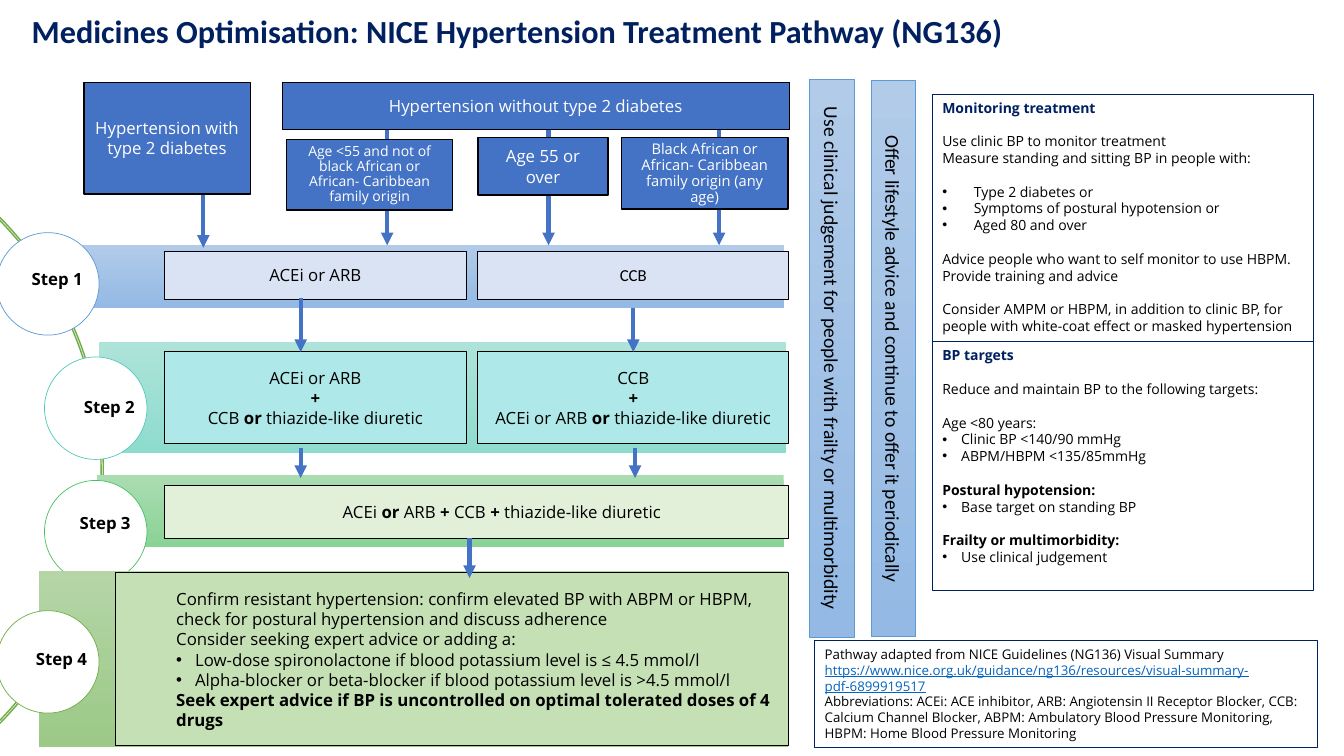
from lxml import etree
from pptx import Presentation
from pptx.dml.color import RGBColor
from pptx.enum.shapes import MSO_CONNECTOR, MSO_SHAPE
from pptx.enum.text import MSO_ANCHOR, PP_ALIGN
from pptx.oxml.ns import qn
from pptx.util import Inches, Pt

RECTANGLE, OVAL, ARC = MSO_SHAPE.RECTANGLE, MSO_SHAPE.OVAL, MSO_SHAPE.BLOCK_ARC
STRAIGHT = MSO_CONNECTOR.STRAIGHT
TOP, MIDDLE = MSO_ANCHOR.TOP, MSO_ANCHOR.MIDDLE
LEFT, CENTER = PP_ALIGN.LEFT, PP_ALIGN.CENTER

THEME = {
    "font": "Open Sans", "title font": "Calibri",
    "black": "000000", "white": "FFFFFF", "navy": "002060", "link": "0563C1",
    "header": "4472C4", "ring": "70AD47", "bar line": "5B9BD5",
    "blue fade": ("B1CBE9", "93B9E4"), "teal fade": ("ADE3D9", "8EDCCE"),
    "mint fade": ("AADCB2", "8AD396"), "green fade": ("B5D5A7", "9CC987"),
    "step 1": "DAE3F3", "step 2": "AEE8E8", "step 3": "E2F0D9", "step 4": "C5E0B4",
    "title": 23, "bar": 14, "body": 12, "group": 10.5, "small": 10, "note": 9.5,
    "gap": 12,
}

# Slide on a grid of 160 columns by 90 rows
deck = Presentation()
deck.slide_width, deck.slide_height = Inches(13.33), Inches(7.5)
page = deck.slides.add_slide(deck.slide_layouts[6])
COLUMN, ROW = deck.slide_width / 160, deck.slide_height / 90


def add_box(kind, area, fill=None, line=None, weight=0.75):
    """Add a shape; a pair of fill colours fades from top to bottom."""
    left, top, width, height = area
    box = page.shapes.add_shape(kind, round(left * COLUMN), round(top * ROW),
                                round(width * COLUMN), round(height * ROW))
    box.shadow.inherit = False
    if isinstance(fill, tuple):
        box.fill.gradient()
        box.fill.gradient_angle = 270
        for stop, color in zip(box.fill.gradient_stops, fill):
            stop.color.rgb = RGBColor.from_string(color)
    elif fill:
        box.fill.solid()
        box.fill.fore_color.rgb = RGBColor.from_string(fill)
    else:
        box.fill.background()
    if line:
        box.line.color.rgb = RGBColor.from_string(line)
        box.line.width = Pt(weight)
    else:
        box.line.fill.background()
    return box


def write(box, lines, size=THEME["body"], color=THEME["black"], font=THEME["font"],
          align=CENTER, anchor=MIDDLE, margin=0, hang=2.25, spacing=None):
    """Write lines: ** switches bold, a leading • is a bullet, a leading ^ a gap."""
    frame = box.text_frame
    frame.word_wrap, frame.vertical_anchor = True, anchor
    for number, line in enumerate(lines):
        para = frame.add_paragraph() if number else frame.paragraphs[0]
        para.alignment, para.line_spacing = align, spacing
        if line.startswith("^"):
            para.space_before = Pt(THEME["gap"])
        text = line.lstrip("^")
        bullet = text.startswith("•")
        properties = para._p.get_or_add_pPr()
        properties.set("marL", str(round((margin + hang * bullet) * COLUMN)))
        properties.set("indent", str(round(-hang * bullet * COLUMN)))
        if bullet:
            etree.SubElement(properties, qn("a:buFont")).set("typeface", "Arial")
            etree.SubElement(properties, qn("a:buChar")).set("char", "•")
        for index, piece in enumerate(text.lstrip("•").split("**")):
            if piece:
                span = para.add_run()
                span.text = piece
                span.font.bold = index % 2 == 1
                span.font.size, span.font.name = Pt(size), font
                span.font.color.rgb = RGBColor.from_string(color)


# Title
title = page.shapes.add_textbox(round(2.6 * COLUMN), round(0.8 * ROW),
                                round(131.2 * COLUMN), round(5.9 * ROW))
write(title, ["**Medicines Optimisation: NICE Hypertension Treatment Pathway (NG136)**"],
      THEME["title"], THEME["navy"], THEME["title font"], LEFT, TOP)

# Ring behind the steps
ring = add_box(ARC, (-73.7, 13, 86, 86), None, THEME["ring"], 1)
for index, value in enumerate((189, 27, 0.003)):
    ring.adjustments[index] = value

# Step bands, circles and labels
STEPS = [
    ((5.9, 29.2, 87.5, 7.5), "blue fade", (-0.4, 27.7), "5B9BD5", (2.6, 31.4)),
    ((11.8, 40.7, 81.8, 13.2), "teal fade", (5.3, 42.5), "52CAB8", (8.8, 46.6)),
    ((11.5, 56.6, 81.8, 8.5), "mint fade", (5.3, 57.2), "49BF64", (8.3, 60.4)),
    ((4.6, 68, 89.2, 20.9), "green fade", (-0.4, 72.7), "70AD47", (3.1, 76.7)),
]
for number, (band, fade, circle, outline, label) in enumerate(STEPS, 1):
    add_box(RECTANGLE, band, THEME[fade])
    add_box(OVAL, (*circle, 12.2, 12.2), THEME["white"], outline, 0.5)
    tag = page.shapes.add_textbox(round(label[0] * COLUMN), round(label[1] * ROW),
                                  round(8.8 * COLUMN), round(3.6 * ROW))
    write(tag, [f"**Step {number}**"], align=LEFT, anchor=TOP)
    tag.text_frame.word_wrap = False

# Treatment boxes
LEFT_X, RIGHT_X, LEFT_W, RIGHT_W = 19.6, 56.9, 35.9, 37
TREATMENTS = [
    ((LEFT_X, 29.9, LEFT_W, 5.7), "step 1", "font", ["ACEi or ARB"]),
    ((RIGHT_X, 29.9, RIGHT_W, 5.7), "step 1", "title font", ["CCB"]),
    ((LEFT_X, 41.9, LEFT_W, 10.9), "step 2", "font",
     ["ACEi or ARB", "**+**", "CCB **or** thiazide-like diuretic"]),
    ((RIGHT_X, 41.9, RIGHT_W, 10.9), "step 2", "font",
     ["CCB", "**+**", "ACEi or ARB **or** thiazide-like diuretic"]),
]
for area, fill, font, lines in TREATMENTS:
    treatment = add_box(RECTANGLE, area, THEME[fill], THEME["black"])
    write(treatment, lines, font=THEME[font])
second_ccb = treatment

triple = add_box(RECTANGLE, (LEFT_X, 57.8, 74.3, 6.3), THEME["step 3"], THEME["black"])
write(triple, ["ACEi **or** ARB **+** CCB **+** thiazide-like diuretic"], margin=6)

resistant = add_box(RECTANGLE, (13.8, 68.2, 80.1, 20.6), THEME["step 4"], THEME["black"])
write(resistant, [
    "Confirm resistant hypertension: confirm elevated BP with ABPM or HBPM, "
    "check for postural hypertension and discuss adherence",
    "Consider seeking expert advice or adding a:",
    "•Low-dose spironolactone if blood potassium level is ≤ 4.5 mmol/l",
    "•Alpha-blocker or beta-blocker if blood potassium level is >4.5 mmol/l",
    "**Seek expert advice if BP is uncontrolled on optimal tolerated doses of 4 drugs**",
], align=LEFT, margin=6)

# Downward arrows: column, first row, last row, box joined at the end
ARROWS = [
    (24.2, 18.6, 29.5, None), (46.1, 13.9, 29.2, None), (65.3, 13.9, 29.2, None),
    (85.6, 14.3, 29.2, None), (35.8, 35.5, 41.9, None),
    (RIGHT_X + RIGHT_W / 2, 36.7, 41.9, second_ccb),
    (35.8, 53.3, 56.9, None), (75.6, 53.3, 56.9, None), (55.9, 64.1, 68.8, None),
]
for column, start, end, target in ARROWS:
    arrow = page.shapes.add_connector(STRAIGHT, round(column * COLUMN), round(start * ROW),
                                      round(column * COLUMN), round(end * ROW))
    arrow.line.color.rgb = RGBColor.from_string(THEME["header"])
    arrow.line.width = Pt(3)
    etree.SubElement(arrow.line._get_or_add_ln(), qn("a:tailEnd")).set("type", "triangle")
    etree.SubElement(arrow._element.spPr, qn("a:effectLst"))
    if target:
        arrow.end_connect(target, 0)

# Patient groups
GROUPS = [
    ((10, 9.8, 19.8, 13.3), "body", None, "Hypertension with type 2 diabetes"),
    ((33.6, 9.8, 60.4, 5.6), "body", None, "Hypertension without type 2 diabetes"),
    ((34.1, 16.6, 19.8, 8.4), "small", 0.9,
     "Age <55 and not of black African or African- Caribbean family origin"),
    ((RIGHT_X, 16.4, 15.5, 6.8), "body", None, "Age 55 or over"),
    ((74, 16.4, 19.8, 8.5), "group", 0.9,
     "Black African or African- Caribbean family origin (any age)"),
]
for area, size, spacing, text in GROUPS:
    group = add_box(RECTANGLE, area, THEME["header"], THEME["black"], 1)
    write(group, [text], THEME[size], THEME["white"], spacing=spacing)

# Vertical advice bars
BARS = [
    ((96.4, 9.4, 5.3, 66.5), "Use clinical judgement for people with frailty or multimorbidity"),
    ((103.7, 9.6, 5.3, 66.2), "Offer lifestyle advice and continue to offer it periodically"),
]
for area, text in BARS:
    bar = add_box(RECTANGLE, area, THEME["blue fade"], THEME["bar line"], 0.5)
    write(bar, [text], THEME["bar"], font=THEME["title font"])
    bar.text_frame._txBody.bodyPr.set("vert", "vert")

# Monitoring and target panels
PANELS = [
    ((111, 11.2, 45.4, 29.5), 3.75, [
        "**Monitoring treatment**",
        "^Use clinic BP to monitor treatment",
        "Measure standing and sitting BP in people with:",
        "^•Type 2 diabetes or", "•Symptoms of postural hypotension or", "•Aged 80 and over",
        "^Advice people who want to self monitor to use HBPM. Provide training and advice",
        "^Consider AMPM or HBPM, in addition to clinic BP, for people with "
        "white-coat effect or masked hypertension"]),
    ((111, 40.7, 45.4, 29.6), 2.25, [
        "**BP targets**",
        "^Reduce and maintain BP to the following targets:",
        "^Age <80 years:", "•Clinic BP <140/90 mmHg", "•ABPM/HBPM <135/85mmHg",
        "^**Postural hypotension:**", "•Base target on standing BP",
        "^**Frailty or multimorbidity:**", "•Use clinical judgement"]),
]
for area, hang, lines in PANELS:
    panel = add_box(RECTANGLE, area, None, THEME["navy"])
    write(panel, lines, THEME["small"], align=LEFT, anchor=TOP, hang=hang)
    heading = panel.text_frame.paragraphs[0].runs[0]
    heading.font.color.rgb = RGBColor.from_string(THEME["navy"])

# Reference and abbreviations
note = add_box(RECTANGLE, (97, 76.3, 59.9, 12.7), None, THEME["navy"])
write(note, [
    "Pathway adapted from NICE Guidelines (NG136) Visual Summary "
    "**https://www.nice.org.uk/guidance/ng136/resources/visual-summary-pdf-6899919517**",
    "Abbreviations: ACEi: ACE inhibitor, ARB: Angiotensin II Receptor Blocker, "
    "CCB: Calcium Channel Blocker, ABPM: Ambulatory Blood Pressure Monitoring, "
    "HBPM: Home Blood Pressure Monitoring",
], THEME["note"], align=LEFT, anchor=TOP)
address = note.text_frame.paragraphs[0].runs[1]
address.font.bold, address.font.underline = False, True
address.font.color.rgb = RGBColor.from_string(THEME["link"])

deck.save("out.pptx")
